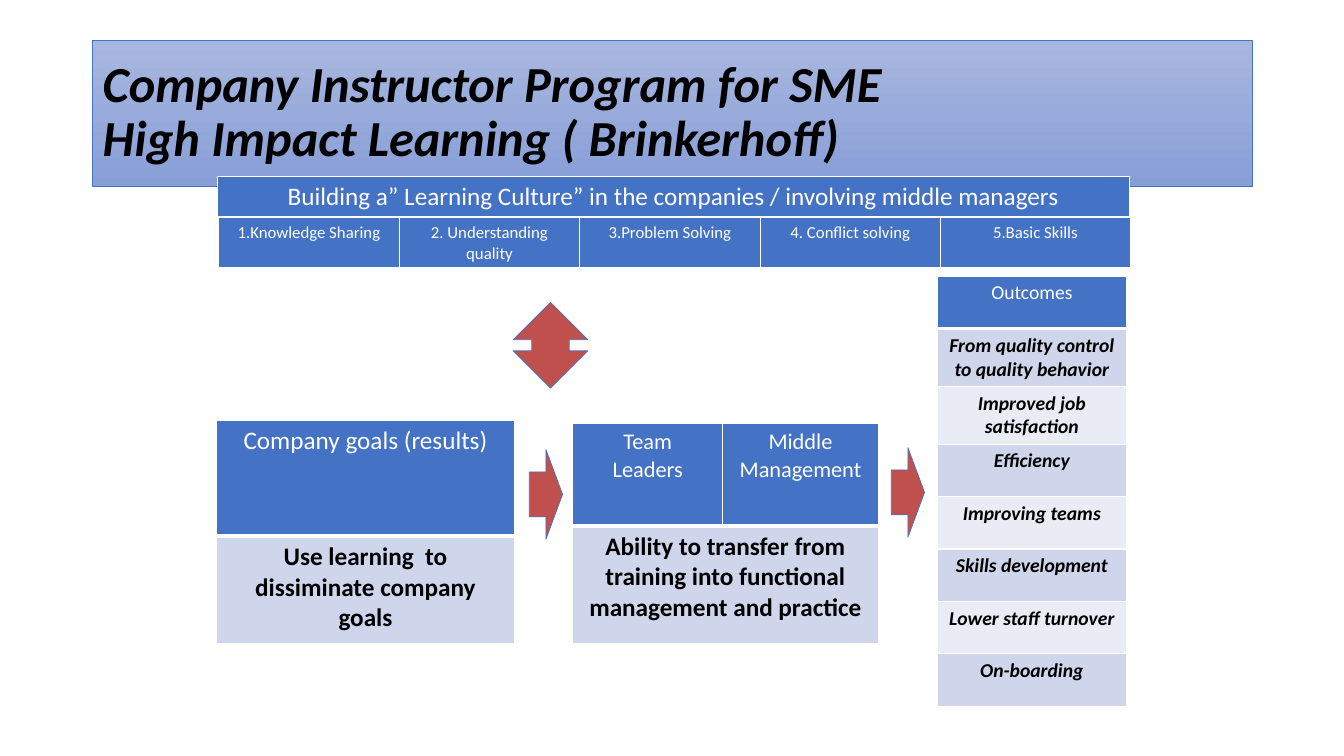
from dataclasses import dataclass

import pptx
import pptx.dml.color
import pptx.enum.shapes
import pptx.enum.text
import pptx.oxml
import pptx.oxml.ns
import pptx.util
from pptx.util import Inches

SHAPE = pptx.enum.shapes.MSO_SHAPE
ALIGN = pptx.enum.text.PP_ALIGN
ANCHOR = pptx.enum.text.MSO_ANCHOR


@dataclass(frozen=True)
class Theme:
    font: str = "Calibri"
    blue: str = "4472C4"
    red: str = "C0504D"
    white: str = "FFFFFF"
    black: str = "000000"
    bands: tuple = ("CFD5EA", "E9EBF5")
    title_top: str = "A8B7DF"
    title_bottom: str = "889ED7"
    title_size: int = 36
    large: int = 18
    medium: int = 16
    outcome: int = 14
    small: int = 12
    thin: float = 0.5
    rule: int = 1
    header_rule: int = 3


THEME = Theme()


def rgb(value):
    return pptx.dml.color.RGBColor.from_string(value)


def style_text(tf, size, color, align, bold=False, italic=False):
    for p in tf.paragraphs:
        p.alignment = align
        p.font.name = THEME.font
        p.font.size = pptx.util.Pt(size)
        p.font.color.rgb = rgb(color)
        p.font.bold = bold
        p.font.italic = italic


def add_outlined(s, kind, left, top, width, height):
    sp = s.shapes.add_shape(kind, Inches(left), Inches(top), Inches(width), Inches(height))
    sp.shadow.inherit = False
    sp.line.color.rgb = rgb(THEME.blue)
    sp.line.width = pptx.util.Pt(THEME.thin)
    return sp


def add_title(s, text):
    sp = add_outlined(s, SHAPE.RECTANGLE, 0.92, 0.4, 11.5, 1.45)
    sp.fill.gradient()
    sp.fill.gradient_angle = 270
    for stop, color in zip(sp.fill.gradient_stops, (THEME.title_top, THEME.title_bottom)):
        stop.color.rgb = rgb(color)
    tf = sp.text_frame
    tf.word_wrap = True
    tf.vertical_anchor = ANCHOR.MIDDLE
    tf.text = text
    tf.paragraphs[0].line_spacing = 0.9
    style_text(tf, THEME.title_size, THEME.black, ALIGN.LEFT, bold=True, italic=True)


def add_arrow(s, kind, left, top, width, height):
    sp = add_outlined(s, kind, left, top, width, height)
    sp.fill.solid()
    sp.fill.fore_color.rgb = rgb(THEME.red)


def set_borders(cell, bottom):
    """Draw white rules on all sides; these must precede the fill in the XML."""
    tcPr = cell._tc.get_or_add_tcPr()
    ns = pptx.oxml.ns.nsdecls("a")
    for side in "LRTB":
        width = pptx.util.Pt(bottom if side == "B" else THEME.rule)
        tcPr.append(pptx.oxml.parse_xml(
            f'<a:ln{side} {ns} w="{width}"><a:solidFill>'
            f'<a:srgbClr val="{THEME.white}"/></a:solidFill></a:ln{side}>'))


def add_table(s, left, top, cols, heights, rows, size, body_size=None, italic=False):
    """Add a blue header row and banded bold rows; a short row spans the table."""
    frame = s.shapes.add_table(len(rows), len(cols), Inches(left), Inches(top),
                               Inches(sum(cols)), Inches(sum(heights)))
    table = frame.table
    for column, width in zip(table.columns, cols):
        column.width = Inches(width)
    for i, (height, texts) in enumerate(zip(heights, rows)):
        table.rows[i].height = Inches(height)
        header = i == 0
        if len(texts) < len(cols):
            table.cell(i, 0).merge(table.cell(i, len(cols) - 1))
        for j in range(len(cols)):
            cell = table.cell(i, j)
            set_borders(cell, THEME.header_rule if header else THEME.rule)
            cell.fill.solid()
            cell.fill.fore_color.rgb = rgb(THEME.blue if header else THEME.bands[(i - 1) % 2])
            if j < len(texts):
                cell.text = texts[j]
                style_text(cell.text_frame, size if header else body_size or size,
                           THEME.white if header else THEME.black, ALIGN.CENTER,
                           bold=not header, italic=italic and not header)


def main():
    prs = pptx.Presentation()
    prs.slide_width, prs.slide_height = Inches(13.33), Inches(7.5)
    s = prs.slides.add_slide(prs.slide_layouts[6])

    add_title(s, "Company Instructor Program for SME\vHigh Impact Learning ( Brinkerhoff)")

    add_table(s, 2.16, 1.75, [9.04], [0.41],
              [["Building a” Learning Culture” in the companies / involving middle managers"]],
              THEME.large)
    add_table(s, 2.17, 2.16, [1.79] * 4 + [1.88], [0.5],
              [["1.Knowledge Sharing", "2. Understanding quality", "3.Problem Solving",
                "4. Conflict solving", "5.Basic Skills"]],
              THEME.small)
    add_table(s, 2.15, 4.17, [2.95], [1.15, 1.07],
              [["Company goals (results)"], ["Use learning  to dissiminate company goals"]],
              THEME.large)
    add_table(s, 5.68, 4.2, [1.49, 1.54], [1.02, 1.17],
              [["Team\nLeaders", "Middle Management"],
               ["Ability to transfer from training into functional management and practice"]],
              THEME.medium, body_size=THEME.large)
    outcomes = ["Outcomes", "From quality control to quality behavior",
                "Improved job satisfaction", "Efficiency", "Improving teams",
                "Skills development", "Lower staff turnover", "On-boarding"]
    add_table(s, 9.3, 2.74, [1.87], [0.52] * len(outcomes),
              [[outcome] for outcome in outcomes], THEME.outcome, italic=True)

    add_arrow(s, SHAPE.RIGHT_ARROW, 8.84, 4.44, 0.33, 0.89)
    add_arrow(s, SHAPE.UP_DOWN_ARROW, 5.09, 3, 0.74, 0.85)
    add_arrow(s, SHAPE.RIGHT_ARROW, 5.25, 4.46, 0.33, 0.89)

    prs.save("out.pptx")


if __name__ == "__main__":
    main()
